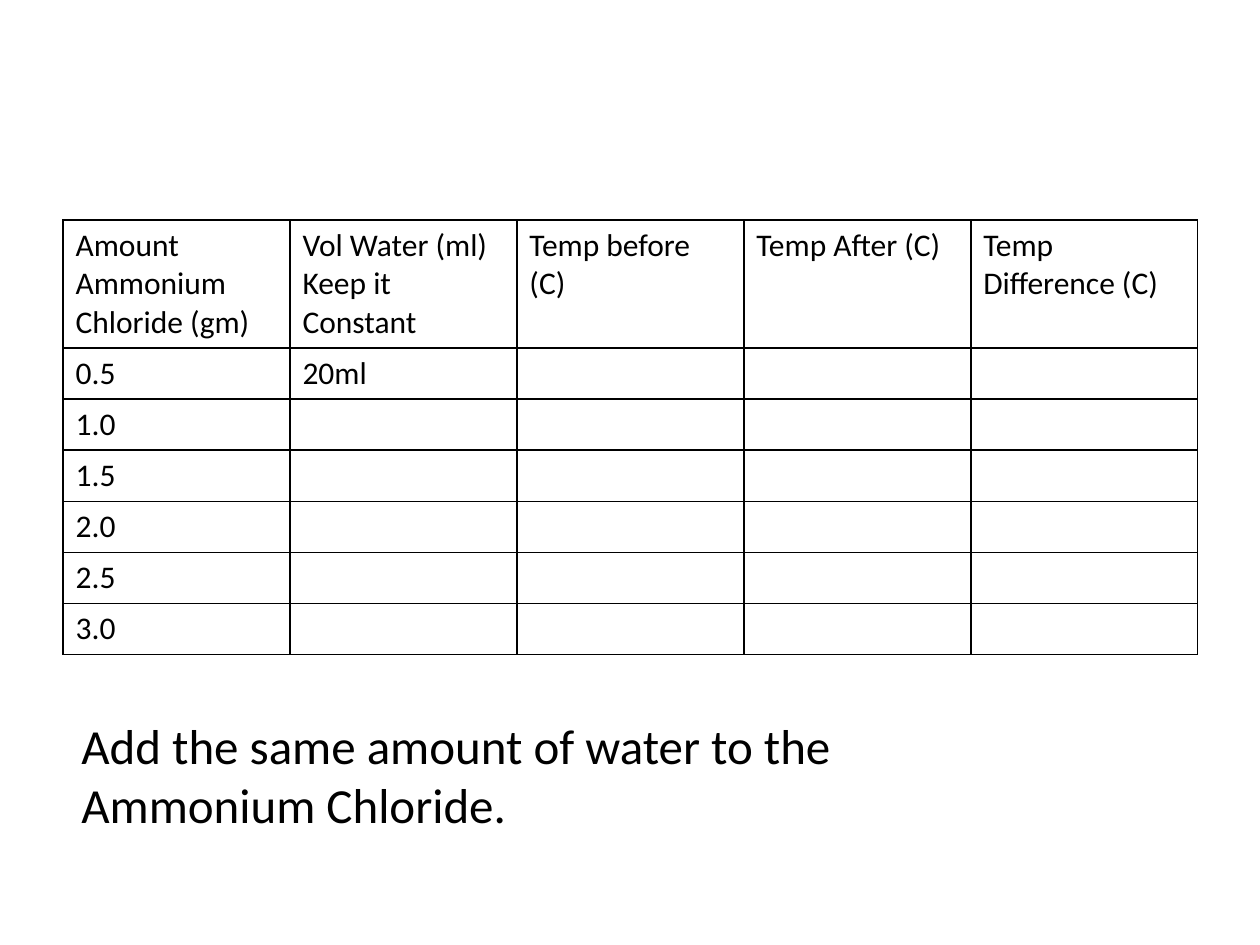
import pptx
import pptx.util
import pptx.dml.color
import pptx.oxml.ns
from lxml import etree

PX = 914400 // 126
BLACK = pptx.dml.color.RGBColor(0, 0, 0)
FONT = "Calibri"


def write(frame, lines, size):
    for i, line in enumerate(lines):
        para = frame.paragraphs[0] if i == 0 else frame.add_paragraph()
        run = para.add_run()
        run.text = line
        run.font.name = FONT
        run.font.size = pptx.util.Pt(size)
        run.font.color.rgb = BLACK


def border(cell):
    props = cell._tc.get_or_add_tcPr()
    for i, side in enumerate(("lnL", "lnR", "lnT", "lnB")):
        line = etree.Element(pptx.oxml.ns.qn("a:" + side), w="12700")
        fill = etree.SubElement(line, pptx.oxml.ns.qn("a:solidFill"))
        etree.SubElement(fill, pptx.oxml.ns.qn("a:srgbClr"), val=str(BLACK))
        props.insert(i, line)


deck = pptx.Presentation()
deck.slide_width = 1260 * PX
deck.slide_height = 945 * PX
slide = deck.slides.add_slide(deck.slide_layouts[6])

# Results table
heads = [
    ["Amount Ammonium Chloride (gm)"],
    ["Vol Water (ml)", "Keep it Constant"],
    ["Temp before (C)"],
    ["Temp After (C)"],
    ["Temp Difference (C)"],
]
doses = ["0.5", "1.0", "1.5", "2.0", "2.5", "3.0"]
rows = [heads] + [[[dose]] + [[]] * 4 for dose in doses]
rows[1][1] = ["20ml"]

head, row, col = 128, 51, 227
table = slide.shapes.add_table(
    len(rows), len(heads), 63 * PX, 220 * PX,
    col * len(heads) * PX, (head + row * len(doses)) * PX).table
table.first_row = False
table.horz_banding = False
for column in table.columns:
    column.width = col * PX
for r, cells in enumerate(rows):
    table.rows[r].height = (row if r else head) * PX
    for c, lines in enumerate(cells):
        cell = table.cell(r, c)
        cell.fill.background()
        border(cell)
        write(cell.text_frame, lines, 18)

# Instruction below the table
box = slide.shapes.add_textbox(69 * PX, 709 * PX, 1131 * PX, 131 * PX)
box.text_frame.word_wrap = True
write(box.text_frame,
      ["Add the same amount of water to the", "Ammonium Chloride."], 28)

deck.save("out.pptx")
